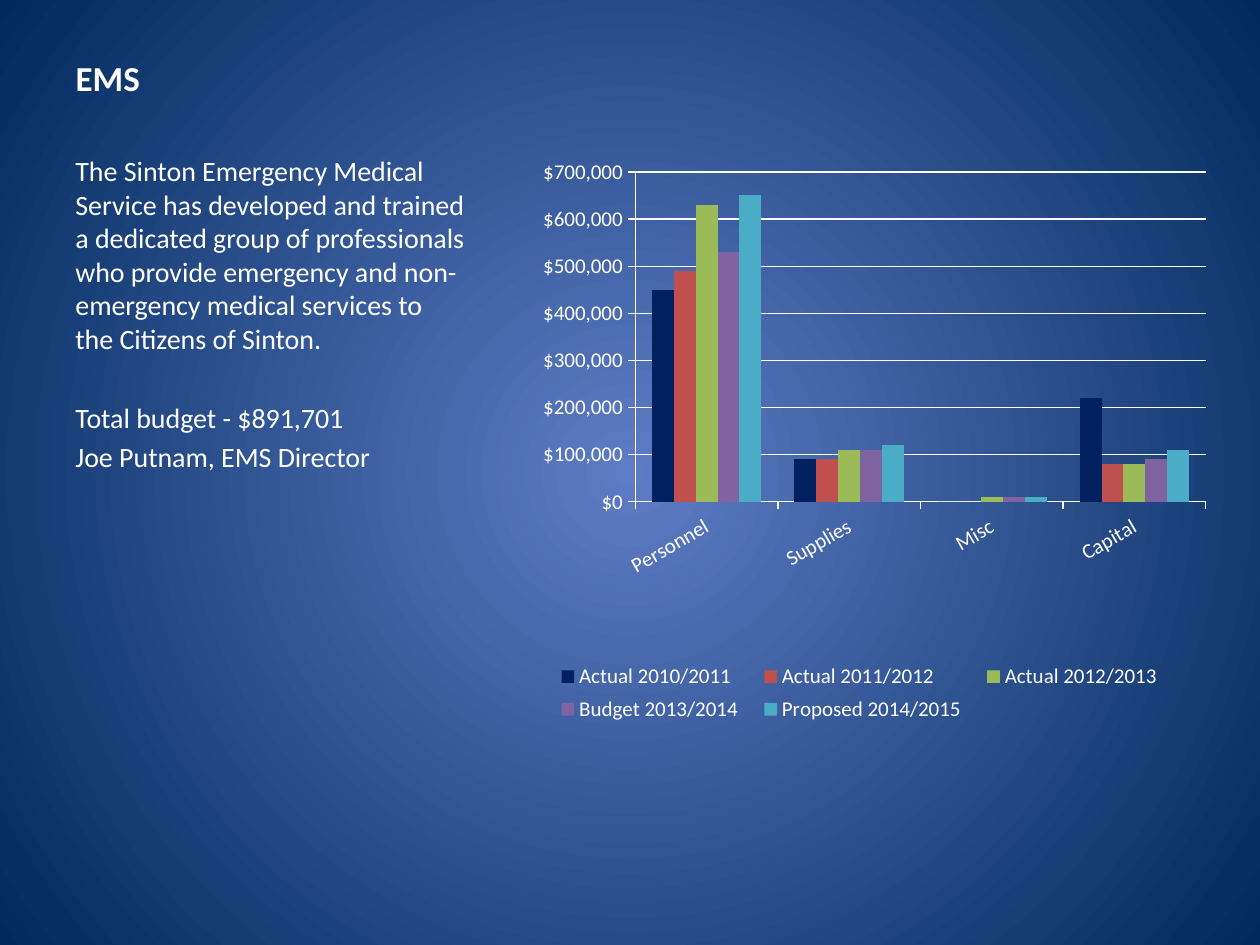
from lxml import etree
from pptx import Presentation
from pptx.chart.data import CategoryChartData
from pptx.dml.color import RGBColor
from pptx.enum.chart import XL_CHART_TYPE, XL_LEGEND_POSITION, XL_TICK_MARK
from pptx.enum.text import MSO_ANCHOR, MSO_AUTO_SIZE, PP_ALIGN
from pptx.oxml import parse_xml
from pptx.oxml.ns import nsdecls, qn
from pptx.util import Pt

COLUMNS = XL_CHART_TYPE.COLUMN_CLUSTERED
BOTTOM_LEGEND = XL_LEGEND_POSITION.BOTTOM
TICK_OUT, TICK_NONE = XL_TICK_MARK.OUTSIDE, XL_TICK_MARK.NONE
TOP, BOTTOM = MSO_ANCHOR.TOP, MSO_ANCHOR.BOTTOM
NO_FIT = MSO_AUTO_SIZE.NONE
LEFT = PP_ALIGN.LEFT

FONT = "Calibri"
WHITE = "FFFFFF"

# Text and space before each paragraph, in points
BODY = [
    ("The Sinton Emergency Medical Service has developed and trained a dedicated "
     "group of professionals who provide emergency and non-emergency medical "
     "services to the Citizens of Sinton.", 3.2),
    ("Total budget - $891,701", 26),
    ("Joe Putnam, EMS Director", 3.2),
]
CATEGORIES = ["Personnel", "Supplies", "Misc", "Capital"]
SERIES = [
    ("Actual 2010/2011", (450000, 90000, 0, 220000), "002060"),
    ("Actual 2011/2012", (490000, 90000, 0, 80000), "C0504D"),
    ("Actual 2012/2013", (630000, 110000, 10000, 80000), "9BBB59"),
    ("Budget 2013/2014", (530000, 110000, 10000, 90000), "8064A2"),
    ("Proposed 2014/2015", (650000, 120000, 10000, 110000), "4BACC6"),
]


def rgb(color):
    return RGBColor.from_string(color)


def style_font(font, size, bold=False):
    font.name, font.size, font.bold = FONT, Pt(size), bold
    font.color.rgb = rgb(WHITE)


def add_text(p, text, size=16, bold=False, before=0):
    p.alignment = LEFT
    p.space_before = Pt(before)
    r = p.add_run()
    r.text = text
    style_font(r.font, size, bold)


def place(sp, box):
    sp.left, sp.top, sp.width, sp.height = map(Pt, box)


def set_frame(tf, anchor):
    tf.word_wrap = True
    tf.auto_size = NO_FIT
    tf.vertical_anchor = anchor


def set_background(s):
    fill = s.background.fill
    fill.gradient()
    for stop, color in zip(fill.gradient_stops, ("5E7CC5", "00295C")):
        stop.color.rgb = rgb(color)
    # Turn the linear gradient into one that spreads from the centre
    lin = next(s.background._cSld.iter(qn("a:lin")))
    lin.getparent().replace(lin, parse_xml(
        f'<a:path {nsdecls("a")} path="circle">'
        '<a:fillToRect l="50000" t="50000" r="50000" b="50000"/></a:path>'))


def build_title(s, box):
    sp = s.shapes.title
    place(sp, box)
    set_frame(sp.text_frame, BOTTOM)
    add_text(sp.text_frame.paragraphs[0], "EMS", size=20, bold=True)


def build_body(s, box):
    tf = s.shapes.add_textbox(*map(Pt, box)).text_frame
    set_frame(tf, TOP)
    for i, (text, before) in enumerate(BODY):
        p = tf.add_paragraph() if i else tf.paragraphs[0]
        add_text(p, text, before=before)


def set_layout(parent, x, y, w, h, inner=False):
    """Fix a chart part's place, in fractions of the chart's size."""
    for old in parent.findall(qn("c:layout")):
        parent.remove(old)
    layout = etree.Element(qn("c:layout"))
    manual = etree.SubElement(layout, qn("c:manualLayout"))
    values = [("xMode", "edge"), ("yMode", "edge"),
              ("x", x), ("y", y), ("w", w), ("h", h)]
    if inner:
        values.insert(0, ("layoutTarget", "inner"))
    for tag, value in values:
        etree.SubElement(manual, qn(f"c:{tag}")).set("val", str(value))
    position = parent.find(qn("c:legendPos"))
    if position is None:
        parent.insert(0, layout)
    else:
        position.addnext(layout)


def style_line(line):
    line.color.rgb = rgb(WHITE)
    line.width = Pt(0.75)


def build_chart(s, box):
    data = CategoryChartData()
    data.categories = CATEGORIES
    for name, values, _ in SERIES:
        data.add_series(name, values)
    chart = s.shapes.add_chart(COLUMNS, *map(Pt, box), data).chart
    chart.has_title = False
    style_font(chart.font, 12)

    # Columns
    plot = chart.plots[0]
    plot.gap_width, plot.overlap = 150, 0
    plot.vary_by_categories = False
    for series, (_, _, color) in zip(plot.series, SERIES):
        series.invert_if_negative = False
        series.format.fill.solid()
        series.format.fill.fore_color.rgb = rgb(color)

    # Axes
    for axis in (chart.category_axis, chart.value_axis):
        axis.major_tick_mark, axis.minor_tick_mark = TICK_OUT, TICK_NONE
        style_font(axis.tick_labels.font, 12)
        style_line(axis.format.line)
    labels = chart.category_axis._element.find(qn("c:txPr"))
    labels.find(qn("a:bodyPr")).set("rot", "-1800000")
    axis = chart.value_axis
    axis.minimum_scale, axis.maximum_scale, axis.major_unit = 0, 700000, 100000
    axis.tick_labels.number_format = '"$"#,##0'
    axis.tick_labels.number_format_is_linked = False
    axis.has_major_gridlines = True
    style_line(axis.major_gridlines.format.line)

    # Legend
    chart.has_legend = True
    legend = chart.legend
    legend.position, legend.include_in_layout = BOTTOM_LEGEND, False
    style_font(legend.font, 12)

    plot_area = chart._chartSpace.chart.plotArea
    set_layout(plot_area, 0.172, 0.079, 0.81, 0.409, inner=True)
    set_layout(legend._element, 0.04, 0.68, 0.9, 0.09)


def main():
    prs = Presentation()
    prs.slide_width, prs.slide_height = Pt(720), Pt(540)
    s = prs.slides.add_slide(prs.slide_layouts[5])
    set_background(s)
    build_title(s, (36, 21.6, 236.9, 38.2))
    build_body(s, (36, 84.2, 236.9, 398.2))
    build_chart(s, (293.8, 61.9, 402.5, 460.8))
    prs.save("out.pptx")


if __name__ == "__main__":
    main()
